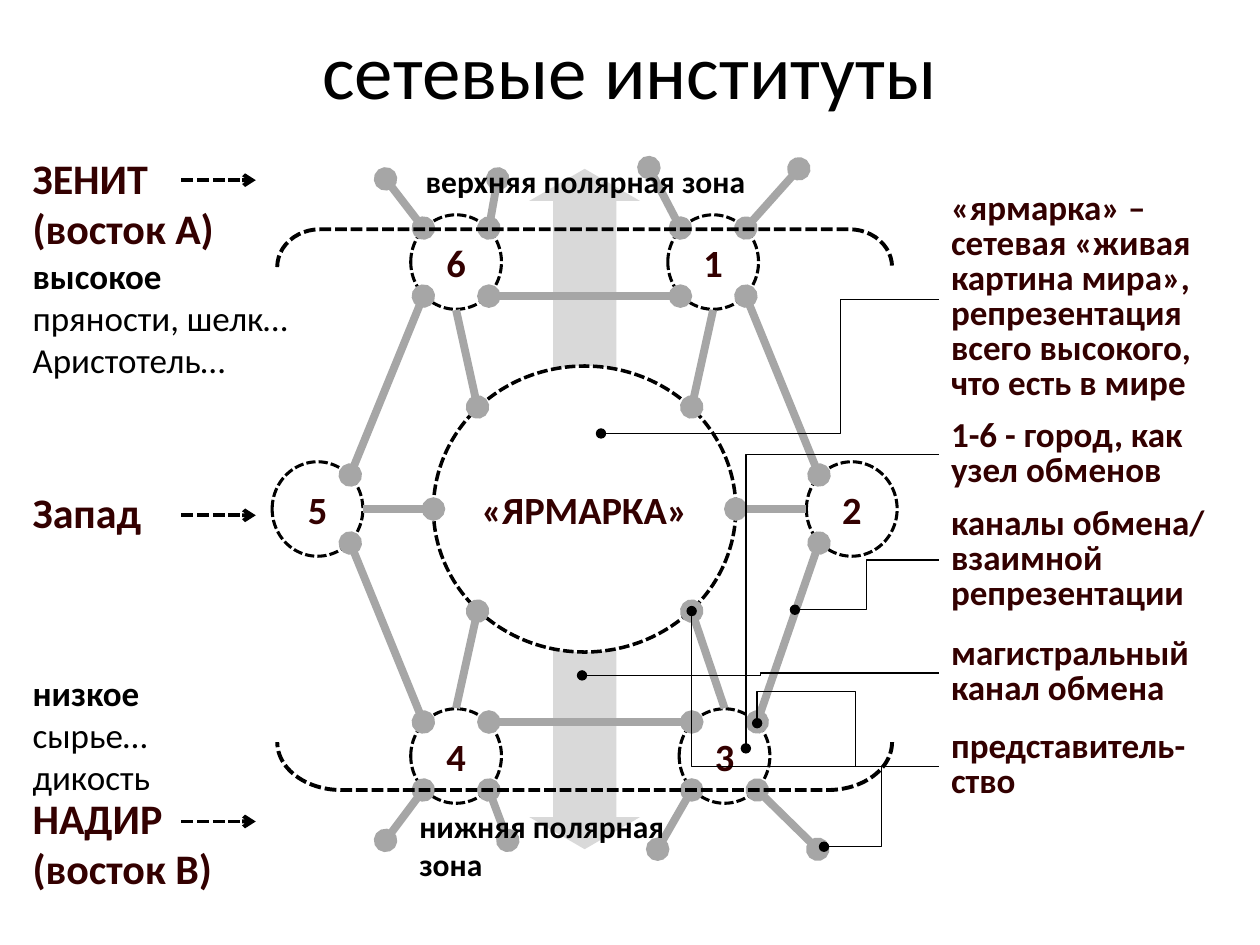
from lxml import etree
from pptx import Presentation
from pptx.dml.color import RGBColor
from pptx.enum.dml import MSO_LINE
from pptx.enum.shapes import MSO_CONNECTOR, MSO_SHAPE
from pptx.enum.text import MSO_ANCHOR, PP_ALIGN
from pptx.oxml.ns import qn
from pptx.util import Inches, Pt

DASH = MSO_LINE.SQUARE_DOT
STRAIGHT, ELBOW = MSO_CONNECTOR.STRAIGHT, MSO_CONNECTOR.ELBOW
OVAL, ARROW = MSO_SHAPE.OVAL, MSO_SHAPE.LEFT_RIGHT_ARROW
LEFT, RIGHT = MSO_SHAPE.LEFT_BRACKET, MSO_SHAPE.RIGHT_BRACKET
MIDDLE, CENTER = MSO_ANCHOR.MIDDLE, PP_ALIGN.CENTER
BLACK, WINE, GREY, PALE, WHITE = "000000", "330000", "A6A6A6", "D9D9D9", "FFFFFF"


def tint(fmt, color):
    """Set a solid colour on a fill or a font."""
    fill = getattr(fmt, "fill", fmt)
    fill.solid()
    fill.fore_color.rgb = RGBColor.from_string(color)


def style(par, size, color, bold=True):
    """Format the runs of a paragraph."""
    for run in par.runs:
        run.font.name, run.font.size, run.font.bold = "Calibri", Pt(size), bold
        tint(run.font, color)


def label(slide, x, y, w, h, text, size, color, lead=None, plain=False):
    """Add a text box; plain makes all but its first paragraph regular."""
    frame = slide.shapes.add_textbox(Inches(x), Inches(y), Inches(w), Inches(h)).text_frame
    frame.word_wrap = True
    frame.text = text
    for i, par in enumerate(frame.paragraphs):
        style(par, size, color, not (plain and i))
        if lead:
            par.line_spacing = Pt(lead)
    return frame


def link(slide, start, end, color, width, head=None, tail=None, kind=STRAIGHT):
    """Add a connector with optional end marks."""
    line = slide.shapes.add_connector(kind, *map(Inches, (*start, *end)))
    tint(line.line, color)
    line.line.width = Pt(width)
    ln = line.line._get_or_add_ln()
    for tag, mark in (("a:headEnd", head), ("a:tailEnd", tail)):
        if mark:
            etree.SubElement(ln, qn(tag)).set("type", mark)
    etree.SubElement(line._element.spPr, qn("a:effectLst"))
    return line


def bend(slide, start, end, geom, *adjs):
    """Add a thin elbow leader that ends in a dot."""
    line = link(slide, start, end, BLACK, 0.75, tail="oval", kind=ELBOW)
    shape = line._element.spPr.find(qn("a:prstGeom"))
    shape.set("prst", geom)
    guides = shape.find(qn("a:avLst"))
    for i, adj in enumerate(adjs, 1):
        guide = etree.SubElement(guides, qn("a:gd"))
        guide.set("name", f"adj{i}")
        guide.set("fmla", f"val {round(adj * 100000)}")


def form(slide, kind, x, y, w, h, fill=None, width=None, turn=0, adjs=()):
    """Add a preset shape centred on a point."""
    shape = slide.shapes.add_shape(kind, *map(Inches, (x - w / 2, y - h / 2, w, h)))
    shape.shadow.inherit = False
    shape.rotation = turn
    for i, adj in enumerate(adjs):
        shape.adjustments[i] = adj
    if fill:
        tint(shape, fill)
    else:
        shape.fill.background()
    if width:
        tint(shape.line, BLACK)
        shape.line.width, shape.line.dash_style = Pt(width), DASH
    else:
        shape.line.fill.background()
    return shape


def node(slide, x, y, w, h, text, width):
    """Add a dashed circle with a centred name."""
    frame = form(slide, OVAL, x, y, w, h, WHITE, width).text_frame
    frame.margin_left = frame.margin_right = frame.margin_top = frame.margin_bottom = 0
    frame.vertical_anchor, frame.word_wrap = MIDDLE, False
    frame.text = text
    frame.paragraphs[0].alignment = CENTER
    style(frame.paragraphs[0], 22, WINE)


def network(slide, x, y, w, h):
    """Draw the fair, its six cities and the channels around the box centre."""
    cx, cy = x + w / 2, y + h / 2
    towns = {"1": (1.02, -1.96), "6": (-1.02, -1.96), "3": (1.11, 1.96),
             "4": (-1.02, 1.96), "2": (2.12, 0), "5": (-2.12, 0)}

    def spot(dx, dy):
        """Turn an offset from the centre into a slide point."""
        return cx + dx, cy + dy

    def port(town, sx, sy):
        """Find a corner port of a city."""
        tx, ty = towns[town]
        return spot(tx + 0.26 * sx, ty + 0.27 * sy)

    form(slide, ARROW, cx, cy, 5.4, 0.88, PALE, turn=90, adjs=(0.57, 0.29))
    for name, place in towns.items():
        node(slide, *spot(*place), 0.72, 0.75, name, 1.75)
    node(slide, cx, cy, 2.4, 2.27, "«ЯРМАРКА»", 2)

    for tx, ty in towns.values():
        sx, sy = (1 if tx > 0 else -1), (ty > 0) - (ty < 0)
        gate = (0.85 * sx, 0.81 * sy) if sy else (1.2 * sx, 0)
        edge = (tx, ty - 0.38 * sy) if sy else (tx - 0.36 * sx, 0)
        link(slide, spot(*gate), spot(*edge), GREY, 4.5, head="oval")

    ring = [("2", -1, -1, "1", 1, 1), ("6", -1, 1, "5", 1, -1),
            ("2", -1, 1, "3", 1, -1), ("1", -1, 1, "6", 1, 1),
            ("3", -1, -1, "4", 1, -1), ("4", -1, -1, "5", 1, 1)]
    pairs = [(port(*row[:3]), port(*row[3:])) for row in ring]
    rays = [("3", 1, 1.85, 2.7), ("6", -1, -1.58, -2.62), ("6", 1, -0.69, -2.62),
            ("3", -1, 0.58, 2.7), ("4", 1, -0.61, 2.63), ("4", -1, -1.58, 2.63),
            ("1", -1, 0.51, -2.71), ("1", 1, 1.7, -2.7)]
    for town, side, dx, dy in rays:
        pairs.append((port(town, side, 1 if dy > 0 else -1), spot(dx, dy)))
    for start, end in pairs:
        link(slide, start, end, GREY, 4.5, "oval", "oval")

    form(slide, LEFT, *spot(0, -2.07), 0.3, 4.88, width=2.25, turn=90, adjs=(1.13,))
    form(slide, RIGHT, *spot(0, 2.04), 0.38, 4.88, width=2.25, turn=90, adjs=(1.34,))
    label(slide, *spot(-1.36, -2.8), 2.79, 0.4, "верхняя полярная зона", 18, BLACK)
    label(slide, *spot(-1.41, 2.32), 2.6, 0.4, "нижняя полярная зона", 18, BLACK)


def poles(slide, x, y, w):
    """Write the poles on the left with their dashed arrows."""
    for dy, h, mark, text in [(0, 1.1, 0.27, "ЗЕНИТ\n(восток А)"),
                              (5.08, 1.1, 5.36, "НАДИР\n(восток В)"),
                              (2.65, 0.61, 2.93, "Запад")]:
        label(slide, x, y + dy, w, h, text, 24, WINE)
        line = link(slide, (x + 1.28, y + mark), (x + 1.87, y + mark), BLACK, 2.25, tail="arrow")
        line.line.dash_style = DASH
    for dy, wide, text in [(0.81, 2.38, "высокое\nпряности, шелк… Аристотель…"),
                           (4.12, 1.38, "низкое\nсырье… дикость")]:
        label(slide, x, y + dy, wide, 1.11, text, 20, BLACK, plain=True)


def legend(slide, x, y, w):
    """Write the notes on the right and lead each to its part."""
    notes = [(0, 1.79, "«ярмарка» – сетевая «живая картина мира», репрезентация всего высокого, что есть в мире"),
             (1.8, 0.66, "1-6 - город, как узел обменов"),
             (2.5, 0.93, "каналы обмена/ взаимной репрезентации"),
             (3.53, 0.66, "магистральный канал обмена"),
             (4.27, 0.67, "представитель-ство")]
    for dy, h, text in notes:
        frame = label(slide, x, y + dy, w, h, text, 20, WINE, lead=20)
    frame.margin_right = 0
    leads = [(0, -2.68, 1.96, "bentConnector3", 0.29),
             (1, -1.53, 4.46, "bentConnector2"),
             (2, -1.14, 3.36, "bentConnector3", 0.5),
             (3, -2.83, 3.88, "bentConnector3", 0.5),
             (4, -1.44, 4.26, "bentConnector4", 0.46, 1.73),
             (4, -1.96, 3.37, "bentConnector2"),
             (4, -0.91, 5.24, "bentConnector3", 0.5)]
    for row, dx, dy, *geom in leads:
        top, h, _ = notes[row]
        bend(slide, (x, y + top + h / 2), (x + dx, y + dy), *geom)


def heading(slide, x, y, w, h):
    """Place and format the title."""
    title = slide.shapes.title
    title.left, title.top, title.width, title.height = map(Inches, (x, y, w, h))
    frame = title.text_frame
    frame.text = "сетевые институты"
    frame.vertical_anchor = MIDDLE
    frame.paragraphs[0].alignment = CENTER
    style(frame.paragraphs[0], 44, BLACK, False)


def main():
    """Build and save the slide."""
    deck = Presentation()
    deck.slide_width, deck.slide_height = Inches(10), Inches(7.5)
    slide = deck.slides.add_slide(deck.slide_layouts[5])
    heading(slide, 0.5, 0, 9, 1.09)
    poles(slide, 0.16, 1.16, 1.79)
    network(slide, 2.16, 1.24, 4.96, 5.6)
    legend(slide, 7.45, 1.48, 2.23)
    deck.save("out.pptx")


if __name__ == "__main__":
    main()
